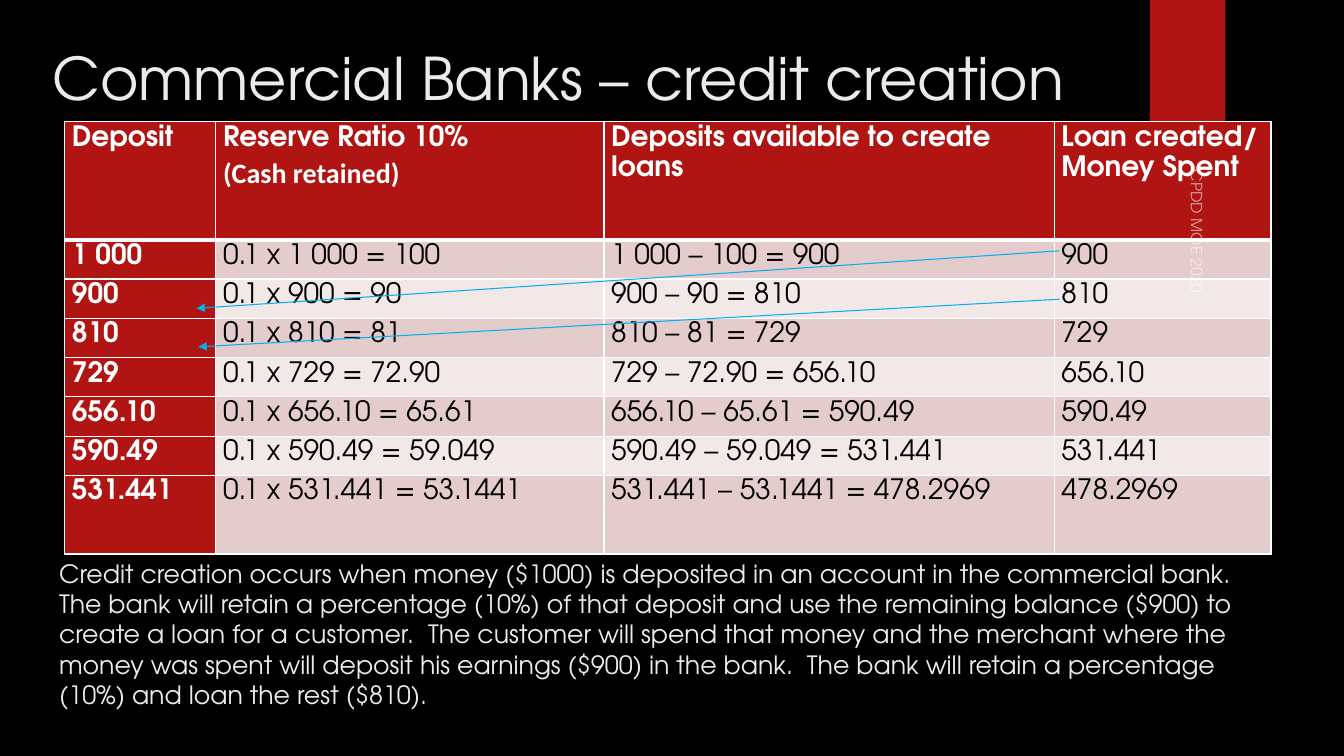
from lxml import etree
from pptx import Presentation, util as u
from pptx.dml import color as dml
from pptx.enum import shapes, text
from pptx.oxml import ns

FONT = "TeX Gyre Adventor"
RED, WHITE, BLACK, PALE, BLUE = "B01513", "FFFFFF", "000000", "EBEBEB", "00B0F0"
BANDS = ("E4CCCC", "F2E8E7")
HEADINGS = (
    ("Deposit",),
    ("Reserve Ratio 10%", "(Cash retained)"),
    ("Deposits available to create loans",),
    ("Loan created/", "Money Spent"),
)
AMOUNTS = ("1 000", "900", "810", "729", "656.10", "590.49", "531.441", "478.2969")
RESERVES = ("100", "90", "81", "72.90", "65.61", "59.049", "53.1441")
COLUMN_WIDTHS = (3.81, 9.78, 11.35, 5.46)
ROW_HEIGHTS = (2.97, *[0.99] * 6, 1.98)
ARROWS = (((25.07, 3.25), (3.32, 4.7)), ((25.07, 4.47), (3.37, 5.67)))
EXPLANATION = (
    "Credit creation occurs when money ($1000) is deposited in an account in the "
    "commercial bank.  The bank will retain a percentage (10%) of that deposit and use "
    "the remaining balance ($900) to create a loan for a customer.  The customer will "
    "spend that money and the merchant where the money was spent will deposit his "
    "earnings ($900) in the bank.  The bank will retain a percentage (10%) and loan "
    "the rest ($810)."
)


def paint(fill, hex_color, alpha=None):
    """Fill with a solid colour, optionally at an alpha percentage."""
    fill.solid()
    fill.fore_color.rgb = dml.RGBColor.from_string(hex_color)
    if alpha is not None:
        srgb = fill._xPr.find(".//" + ns.qn("a:srgbClr"))
        etree.SubElement(srgb, ns.qn("a:alpha"), val=str(alpha * 1000))


def write_text(frame, lines, size, color, fonts=(FONT,), bold=False, alpha=None, spacing=None):
    """Write one paragraph per line, using the last font for any further lines."""
    for index, line in enumerate(lines):
        paragraph = frame.paragraphs[0] if index == 0 else frame.add_paragraph()
        paragraph.line_spacing = spacing
        run = paragraph.add_run()
        run.text = line
        run.font.size = u.Pt(size)
        run.font.name = fonts[min(index, len(fonts) - 1)]
        run.font.bold = bold
        paint(run.font.fill, color, alpha)


def add_text(slide, box, content, anchor=text.MSO_ANCHOR.TOP, rotation=0, **style):
    """Place a wrapping text box."""
    shape = slide.shapes.add_textbox(*map(u.Cm, box))
    shape.rotation = rotation
    shape.text_frame.word_wrap = True
    shape.text_frame.vertical_anchor = anchor
    write_text(shape.text_frame, (content,), **style)


def set_borders(cell, **widths):
    """Draw white cell borders with widths in points."""
    properties = cell._tc.get_or_add_tcPr()
    for side in ("L", "R", "T", "B"):
        line = etree.SubElement(properties, ns.qn(f"a:ln{side}"), w=str(u.Pt(widths.get(side, 1))))
        fill = etree.SubElement(line, ns.qn("a:solidFill"))
        etree.SubElement(fill, ns.qn("a:srgbClr"), val=WHITE)


def credit_rows():
    """Build the heading row and the rows in which each loan becomes the next deposit."""
    rows = [HEADINGS]
    for deposit, reserve, loan in zip(AMOUNTS, RESERVES, AMOUNTS[1:]):
        rows.append((
            (deposit,),
            (f"0.1 x {deposit} = {reserve}",),
            (f"{deposit} – {reserve} = {loan}",),
            (loan,),
        ))
    return rows


def add_credit_table(slide, box):
    """Place the credit creation table."""
    table = slide.shapes.add_table(len(ROW_HEIGHTS), len(COLUMN_WIDTHS), *map(u.Cm, box)).table
    for column, width in zip(table.columns, COLUMN_WIDTHS):
        column.width = u.Cm(width)
    for row, height in zip(table.rows, ROW_HEIGHTS):
        row.height = u.Cm(height)
    for row_index, row in enumerate(credit_rows()):
        for column_index, lines in enumerate(row):
            cell = table.cell(row_index, column_index)
            strong = row_index == 0 or column_index == 0
            cell.margin_left = cell.margin_right = u.Cm(0.18)
            cell.margin_top = cell.margin_bottom = 0
            set_borders(cell, B=3 if row_index == 0 else 1, T=3 if row_index == 1 else 1)
            paint(cell.fill, RED if strong else BANDS[(row_index - 1) % 2])
            fonts = (FONT, "Calibri") if lines == HEADINGS[1] else (FONT,)
            write_text(cell.text_frame, lines, size=20, color=WHITE if strong else BLACK,
                       fonts=fonts, bold=strong, spacing=1.15)


def add_loan_arrows(slide, box):
    """Point from each loan to the deposit that it becomes."""
    left, top = box[:2]
    for start, end in ARROWS:
        points = [u.Cm(round(origin + offset, 2)) for point in (start, end)
                  for origin, offset in zip((left, top), point)]
        arrow = slide.shapes.add_connector(shapes.MSO_CONNECTOR.STRAIGHT, *points)
        arrow.line.width = u.Pt(0.75)
        paint(arrow.line.fill, BLUE)
        etree.SubElement(arrow.line._get_or_add_ln(), ns.qn("a:tailEnd"), type="triangle")
        etree.SubElement(arrow._element.spPr, ns.qn("a:effectLst"))


def add_ribbon(slide, box):
    """Place the red ribbon at the top edge."""
    ribbon = slide.shapes.add_shape(shapes.MSO_SHAPE.RECTANGLE, *map(u.Cm, box))
    ribbon.shadow.inherit = False
    ribbon.line.fill.background()
    paint(ribbon.fill, RED)


def main():
    """Build and save the credit creation slide."""
    presentation = Presentation()
    presentation.slide_width, presentation.slide_height = u.Cm(33.87), u.Cm(19.05)
    slide = presentation.slides.add_slide(presentation.slide_layouts[6])
    paint(slide.background.fill, BLACK)
    add_ribbon(slide, (28.98, 0, 1.9, 3.18))
    add_text(slide, (1.07, 0.79, 26.14, 2.29), "Commercial Banks – credit creation",
             anchor=text.MSO_ANCHOR.MIDDLE, size=42, color=PALE)
    table_box = (1.63, 3.07, sum(COLUMN_WIDTHS), sum(ROW_HEIGHTS))
    add_credit_table(slide, table_box)
    add_loan_arrows(slide, table_box)
    add_text(slide, (1.24, 13.94, 31.12, 3.25), EXPLANATION, size=18, color=PALE)
    add_text(slide, (24.87, 8.97, 10.72, 0.84), "CPDD MOE 2020",
             anchor=text.MSO_ANCHOR.BOTTOM, rotation=90, size=11, color=WHITE, alpha=60)
    presentation.save("out.pptx")


if __name__ == "__main__":
    main()
